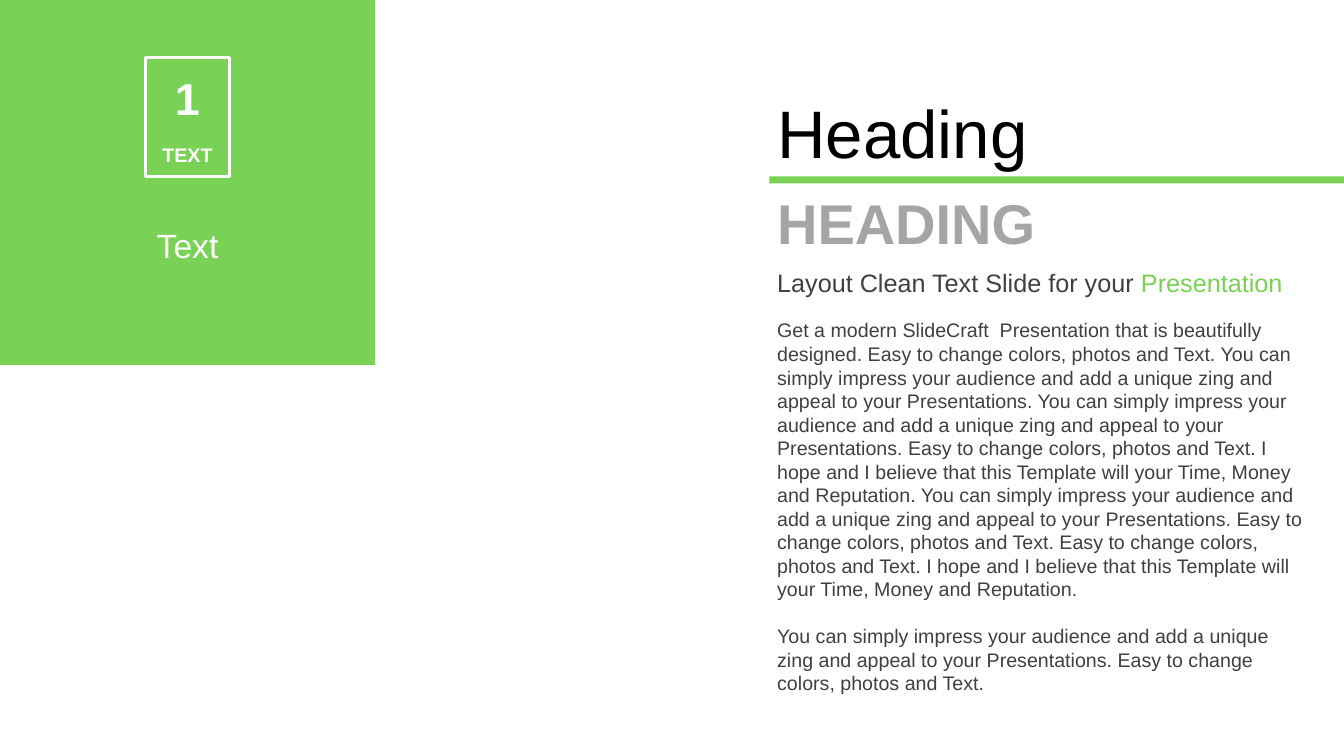
from pptx import Presentation
from pptx.dml.color import RGBColor
from pptx.enum.shapes import MSO_SHAPE
from pptx.enum.text import MSO_ANCHOR, PP_ALIGN
from pptx.util import Inches, Pt

GREEN, WHITE, DARK = "79D155", "FFFFFF", "404040"

IMPRESS = ("You can simply impress your audience and add a unique zing "
           "and appeal to your Presentations.")
EASY = "Easy to change colors, photos and Text."
HOPE = ("I hope and I believe that this Template will your Time, "
        "Money and Reputation.")
INTRO = "Get a modern SlideCraft  Presentation that is beautifully designed."
BODY = [" ".join([INTRO, EASY, IMPRESS, IMPRESS, EASY, HOPE,
                  IMPRESS, EASY, EASY, HOPE]),
        " ".join([IMPRESS, EASY])]


def color(code):
    return RGBColor.from_string(code)


def add_rect(slide, box, fill=None, line=None):
    rect = slide.shapes.add_shape(MSO_SHAPE.RECTANGLE, *map(Inches, box))
    rect.shadow.inherit = False
    if fill:
        rect.fill.solid()
        rect.fill.fore_color.rgb = color(fill)
    else:
        rect.fill.background()
    if line:
        rect.line.color.rgb = color(line)
        rect.line.width = Pt(2)
    else:
        rect.line.fill.background()


def add_text(slide, box, paras, size, ink=DARK, bold=False,
             align=PP_ALIGN.LEFT, anchor=MSO_ANCHOR.TOP, wrap=True, gap=0):
    """Each paragraph is a string or a list of (text, colour) runs."""
    frame = slide.shapes.add_textbox(*map(Inches, box)).text_frame
    frame.word_wrap = wrap
    frame.vertical_anchor = anchor
    for i, runs in enumerate(paras):
        para = frame.add_paragraph() if i else frame.paragraphs[0]
        para.alignment = align
        if i:
            para.space_before = Pt(gap)
        for text, tint in [(runs, ink)] if isinstance(runs, str) else runs:
            run = para.add_run()
            run.text = text
            font = run.font
            font.name, font.size, font.bold = "Arial", Pt(size), bold
            font.color.rgb = color(tint)


def add_panel(slide, left, top, width, height):
    """Green block with a numbered badge and a caption."""
    add_rect(slide, (left, top, width, height), fill=GREEN)
    side = 0.84
    edge, head = left + (width - side) / 2, top + 0.57
    add_rect(slide, (edge, head, side, 1.18), line=WHITE)
    add_text(slide, (edge + 0.19, head + 0.08, 0.45, 0.64), ["1"], 32, WHITE,
             bold=True, align=PP_ALIGN.RIGHT, wrap=False)
    add_text(slide, (edge, head + 0.8, side, 0.34), ["TEXT"], 14, WHITE,
             bold=True, align=PP_ALIGN.CENTER)
    add_text(slide, (left + 0.14, top + 2.18, width - 0.28, 0.5), ["Text"], 24,
             WHITE, align=PP_ALIGN.CENTER, anchor=MSO_ANCHOR.MIDDLE)


def add_story(slide, left, top, width):
    """Headings, green rule, tagline and body text."""
    add_text(slide, (left, top, 5.1, 0.91), ["Heading"], 48, "000000")
    add_text(slide, (left, top + 0.96, 5.1, 0.77), ["HEADING"], 40, "A5A5A5",
             bold=True)
    tagline = [("Layout Clean Text Slide for your ", DARK),
               ("Presentation", GREEN)]
    add_text(slide, (left, top + 1.74, 5.3, 0.4), [tagline], 18,
             anchor=MSO_ANCHOR.MIDDLE)
    add_text(slide, (left, top + 2.25, 5.44, 3.87), BODY, 14, gap=16.8)
    add_rect(slide, (left + 0.02, top + 0.89, width - 0.02, 0.07), fill=GREEN)


def main():
    deck = Presentation()
    deck.slide_width, deck.slide_height = Inches(13.33), Inches(7.5)
    slide = deck.slides.add_slide(deck.slide_layouts[6])
    add_panel(slide, 0, 0, 3.72, 3.62)
    add_story(slide, 7.61, 0.86, 5.72)
    deck.save("out.pptx")


if __name__ == "__main__":
    main()
